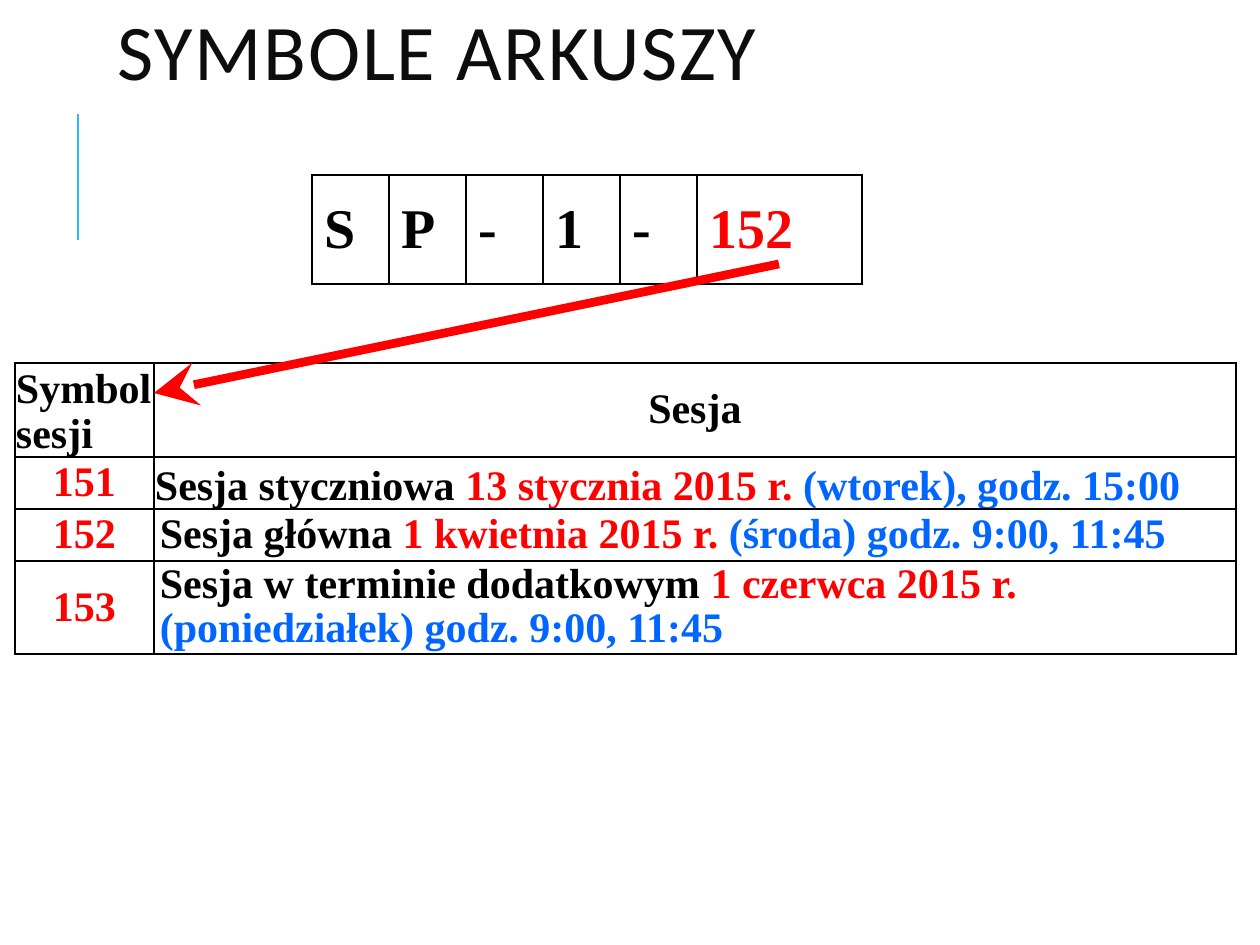
from lxml import etree
from pptx import Presentation
from pptx.dml.color import RGBColor
from pptx.enum import shapes, text
from pptx.oxml.ns import qn
from pptx.util import Pt

PX = 914400 // 126
BLACK = RGBColor(0x00, 0x00, 0x00)
INK = RGBColor(0x0D, 0x0D, 0x0D)
RED = RGBColor(0xFF, 0x00, 0x00)
BLUE = RGBColor(0x00, 0x66, 0xFF)
SKY = RGBColor(0x31, 0xB6, 0xFD)
WHITE = RGBColor(0xFF, 0xFF, 0xFF)
LEFT, CENTER = text.PP_ALIGN.LEFT, text.PP_ALIGN.CENTER
MIDDLE, BOTTOM = text.MSO_ANCHOR.MIDDLE, text.MSO_ANCHOR.BOTTOM

# Content
TITLE = "SYMBOLE ARKUSZY"
SHEET_CODE = [("S", BLACK), ("P", BLACK), ("-", BLACK), ("1", BLACK), ("-", BLACK), ("152", RED)]
HEADINGS = (["Symbol", "sesji"], "Sesja")
SESSIONS = [
    ("151", [("Sesja styczniowa ", BLACK), ("13 stycznia 2015 r.", RED),
             (" (wtorek), godz. 15:00", BLUE)]),
    ("152", [("Sesja główna ", BLACK), ("1 kwietnia 2015 r. ", RED),
             ("(środa) godz. 9:00, 11:45", BLUE)]),
    ("153", [("Sesja w terminie dodatkowym ", BLACK), ("1 czerwca 2015 r. ", RED),
             ("(poniedziałek) godz. 9:00, 11:45", BLUE)]),
]


def px(*lengths):
    return [length * PX for length in lengths]


def add_runs(paragraph, runs, size, font="Times New Roman", bold=True):
    for words, color in runs:
        run = paragraph.add_run()
        run.text = words
        run.font.size, run.font.name, run.font.bold = Pt(size), font, bold
        run.font.color.rgb = color


def add_grid(slide, left, top, widths, heights):
    frame = slide.shapes.add_table(len(heights), len(widths),
                                   *px(left, top, sum(widths), sum(heights)))
    grid = frame.table
    grid.first_row = grid.horz_banding = False
    for column, width in zip(grid.columns, widths):
        column.width = width * PX
    for row, height in zip(grid.rows, heights):
        row.height = height * PX
    return grid


def fill_cell(cell, paragraphs, size, insets, align=LEFT, anchor=MIDDLE, fill=None, spacing=1.0):
    cell.vertical_anchor = anchor
    cell.margin_left, cell.margin_top, cell.margin_right, cell.margin_bottom = px(*insets)
    for i, runs in enumerate(paragraphs):
        frame = cell.text_frame
        paragraph = frame.add_paragraph() if i else frame.paragraphs[0]
        paragraph.alignment, paragraph.line_spacing = align, spacing
        add_runs(paragraph, runs, size)
    # Borders precede the fill in the cell properties
    properties = cell._tc.get_or_add_tcPr()
    for side in ("a:lnL", "a:lnR", "a:lnT", "a:lnB"):
        border = etree.SubElement(properties, qn(side), w=str(Pt(1)))
        solid = etree.SubElement(border, qn("a:solidFill"))
        etree.SubElement(solid, qn("a:srgbClr"), val=str(BLACK))
    if fill is None:
        cell.fill.background()
    else:
        cell.fill.solid()
        cell.fill.fore_color.rgb = fill


def add_line(slide, start, end, color, width):
    line = slide.shapes.add_connector(shapes.MSO_CONNECTOR.STRAIGHT, *px(*start, *end))
    line.line.color.rgb, line.line.width = color, Pt(width)
    etree.SubElement(line._element.spPr, qn("a:effectLst"))
    return line


deck = Presentation()
deck.slide_width, deck.slide_height = px(1260, 945)
slide = deck.slides.add_slide(deck.slide_layouts[5])

# Title with the accent line
add_line(slide, (78, 240), (78, 114), SKY, 1.5)
title = slide.shapes.title
title.left, title.top, title.width, title.height = px(105, 16, 1004, 84)
title.text_frame.vertical_anchor = MIDDLE
title.text_frame.auto_size = text.MSO_AUTO_SIZE.NONE
heading = title.text_frame.paragraphs[0]
heading.alignment, heading.line_spacing = LEFT, 0.8
add_runs(heading, [(TITLE, INK)], 45, "Calibri", False)
heading.runs[0].font._element.set("spc", "100")

# Sheet code, one symbol per cell
code = add_grid(slide, 312, 175, [77] * 5 + [165], [109])
for cell, symbol in zip(code.rows[0].cells, SHEET_CODE):
    fill_cell(cell, [[symbol]], 32, (13, 6, 13, 6), fill=WHITE)

# Session table
TIGHT, INDENTED = (1, 1, 1, 0), (6, 0, 6, 0)
sessions = add_grid(slide, 15, 363, [139, 1082], [94, 52, 52, 93])
symbol_heading, session_heading = HEADINGS
fill_cell(sessions.cell(0, 0), [[(line, BLACK)] for line in symbol_heading], 24, TIGHT,
          anchor=BOTTOM, spacing=0.95)
fill_cell(sessions.cell(0, 1), [[(session_heading, BLACK)]], 24, TIGHT, CENTER, spacing=0.95)
for row, (symbol, description) in enumerate(SESSIONS, start=1):
    fill_cell(sessions.cell(row, 0), [[(symbol, RED)]], 24, TIGHT, CENTER, spacing=0.95)
    insets, anchor = (TIGHT, BOTTOM) if row == 1 else (INDENTED, MIDDLE)
    fill_cell(sessions.cell(row, 1), [description], 24, insets, anchor=anchor, spacing=0.95)

# Arrow from the code to the symbol column
arrow = add_line(slide, (779, 264), (154, 393), RED, 5)
etree.SubElement(arrow.line._get_or_add_ln(), qn("a:tailEnd"), type="stealth", w="lg", len="lg")

deck.save("out.pptx")
